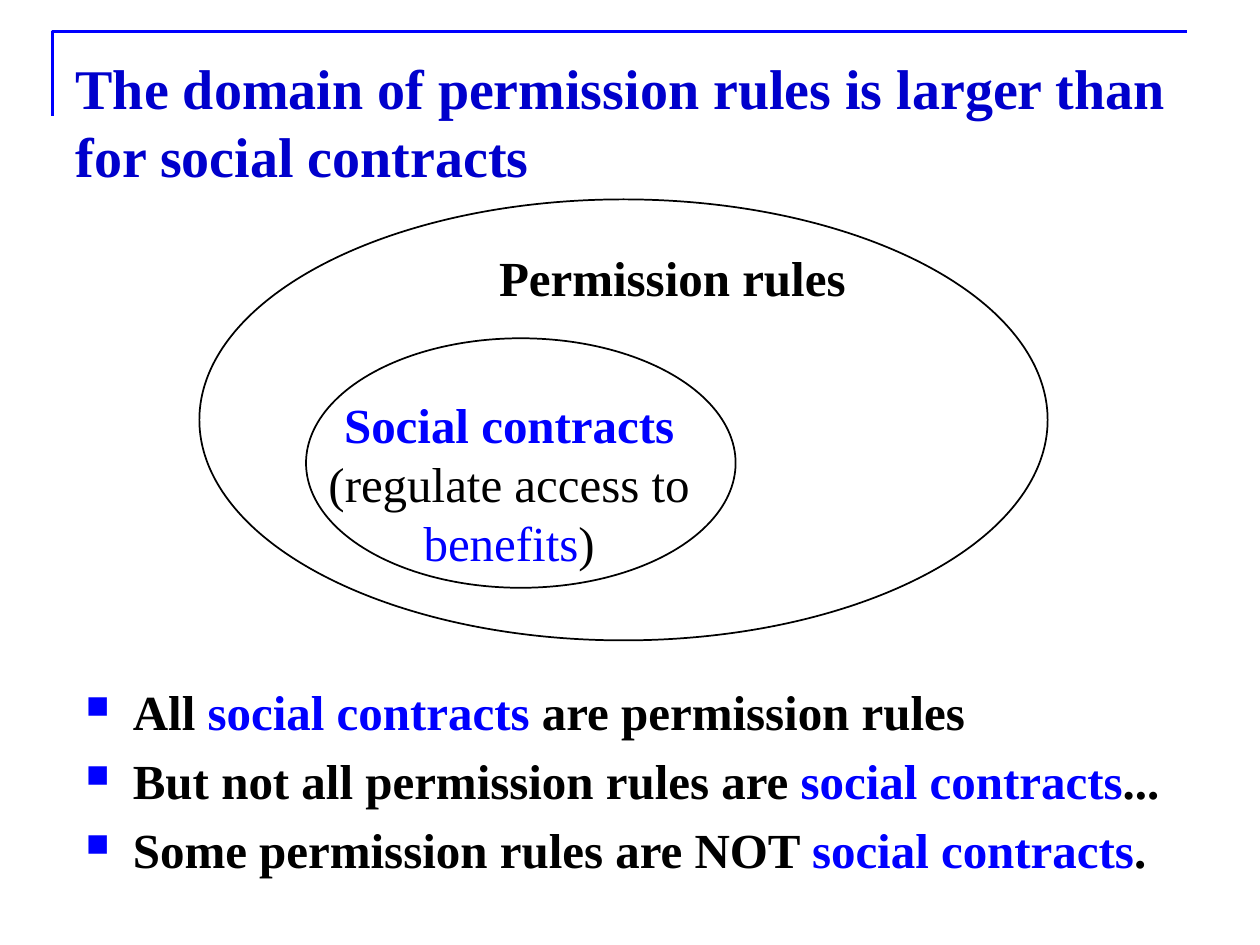
from pptx import Presentation
from pptx.dml.color import RGBColor
from pptx.enum.shapes import MSO_SHAPE
from pptx.enum.text import MSO_ANCHOR, PP_ALIGN
from pptx.oxml import parse_xml
from pptx.oxml.ns import nsdecls
from pptx.util import Cm, Pt

HUES = {"ink": "000000", "blue": "0000FF", "head": "0000CC"}


def hue(name):
    return RGBColor.from_string(HUES[name])


def put(item, vals):
    for key, val in vals.items():
        setattr(item, key, val)


def box(*nums):
    return dict(zip(("left", "top", "width", "height"), map(Cm, nums)))


class Deck:
    face = "Times New Roman"

    def __init__(self, wide, high):
        self.prs = Presentation()
        put(self.prs, {"slide_width": Cm(wide), "slide_height": Cm(high)})
        self.slide = self.prs.slides.add_slide(self.prs.slide_layouts[5])
        self.group = None

    def fill(self, para, runs, size=28):
        """Each run is (text, colour, bold)."""
        for text, tone, bold in runs:
            run = para.add_run()
            run.text = text
            put(run.font, {"name": self.face, "size": Pt(size), "bold": bold})
            run.font.color.rgb = hue(tone)

    def title(self, text, place):
        head = self.slide.shapes.title
        put(head, place)
        put(head.text_frame, {"vertical_anchor": MSO_ANCHOR.MIDDLE, "word_wrap": True})
        para = head.text_frame.paragraphs[0]
        para.alignment = PP_ALIGN.LEFT
        self.fill(para, [(text, "head", True)], 32)

    def rule(self, spots):
        start, *rest = [(Cm(x), Cm(y)) for x, y in spots]
        pen = self.slide.shapes.build_freeform(*start)
        pen.add_line_segments(rest, close=False)
        self.trace(pen.convert_to_shape(), "blue", 1.5)

    def trace(self, shape, tone, width):
        shape.shadow.inherit = False
        shape.fill.background()
        shape.line.color.rgb = hue(tone)
        shape.line.width = Pt(width)

    def begin(self):
        self.group = self.slide.shapes.add_group_shape()

    def oval(self, place):
        shape = self.group.shapes.add_shape(MSO_SHAPE.OVAL, *place.values())
        self.trace(shape, "ink", 1)

    def text(self, shapes, place, lines, form):
        frame = shapes.add_textbox(*place.values()).text_frame
        frame.word_wrap = True
        for num, runs in enumerate(lines):
            para = frame.add_paragraph() if num else frame.paragraphs[0]
            put(para, form)
            self.fill(para, runs)
        return frame

    def label(self, place, lines):
        self.text(self.group.shapes, place, lines, {"alignment": PP_ALIGN.CENTER})

    def bullets(self, place, lines):
        form = {"alignment": PP_ALIGN.LEFT, "space_before": Pt(5.6)}
        frame = self.text(self.slide.shapes, place, lines, form)
        marks = (
            f'<a:buClr {nsdecls("a")}><a:srgbClr val="{HUES["blue"]}"/></a:buClr>',
            f'<a:buSzPct {nsdecls("a")} val="65000"/>',
            f'<a:buChar {nsdecls("a")} char="■"/>',
        )
        for para in frame.paragraphs:
            props = para._p.get_or_add_pPr()
            props.set("marL", str(Cm(0.95)))
            props.set("indent", str(Cm(-0.95)))
            for mark in marks:
                props.append(parse_xml(mark))

    def save(self):
        self.prs.save("out.pptx")


def main():
    deck = Deck(25.4, 19.05)

    # Corner rule and title
    deck.rule([(1.06, 2.33), (1.06, 0.63), (23.92, 0.63)])
    deck.title("The domain of permission rules is larger than for social contracts",
               box(1.27, 0.85, 22.86, 3.18))

    # Bullets: text before, the blue term, text after
    term = ("social contracts", "blue", True)
    facts = [("All ", " are permission rules"),
             ("But not all permission rules are ", "..."),
             ("Some permission rules are NOT ", ".")]
    deck.bullets(box(1.48, 13.62, 22.86, 4.17),
                 [[(pre, "ink", True), term, (post, "ink", True)] for pre, post in facts])

    # Nested sets
    deck.begin()
    deck.oval(box(4.02, 4.02, 17.1, 8.89))
    deck.oval(box(6.17, 6.82, 8.66, 5.03))
    deck.label(box(9.53, 4.87, 8.05, 1.2), [[("Permission rules", "ink", True)]])
    deck.label(box(5.92, 7.83, 8.69, 2.33), [
        [("Social contracts", "blue", True)],
        [("(regulate access to ", "ink", False), ("benefits", "blue", False),
         (")", "ink", False)],
    ])

    deck.save()


if __name__ == "__main__":
    main()
